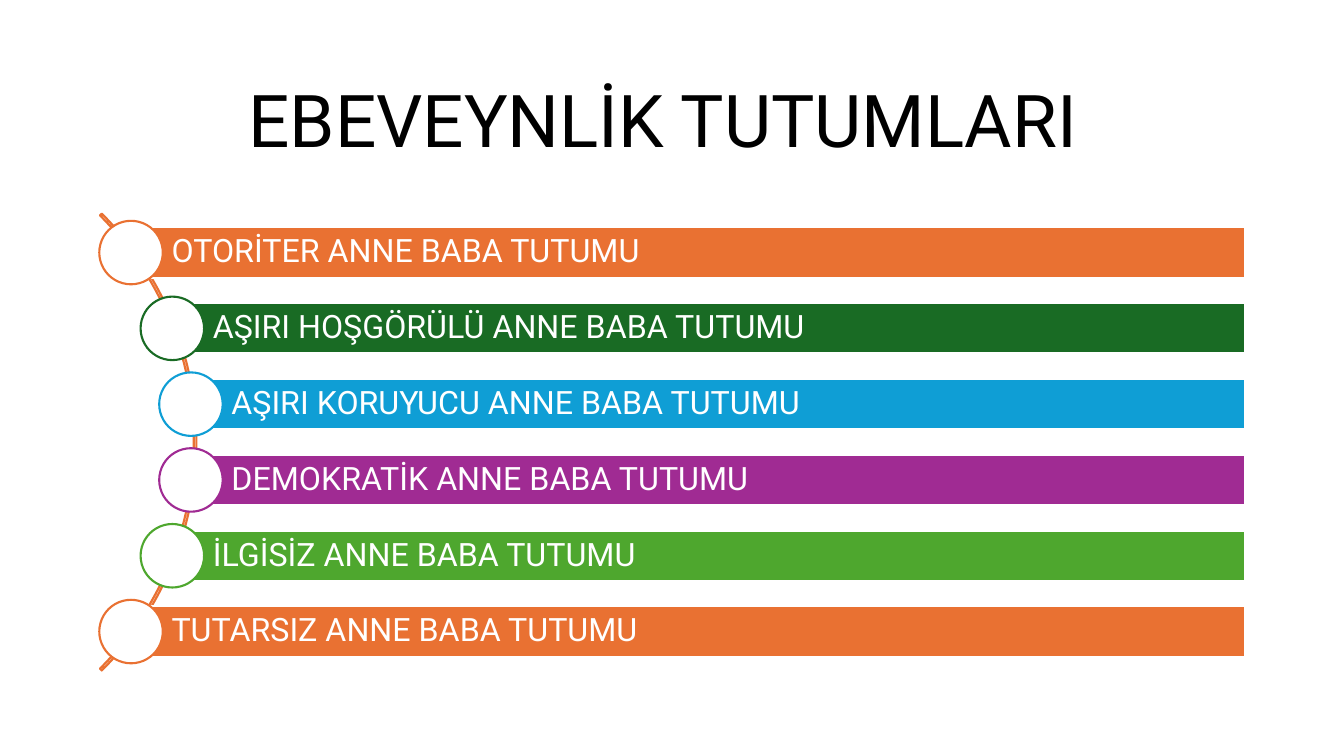
from math import sqrt

from pptx import Presentation
from pptx.dml.color import RGBColor
from pptx.enum.shapes import MSO_SHAPE
from pptx.enum.text import MSO_ANCHOR, PP_ALIGN
from pptx.util import Cm, Pt

FONT = "Roboto"
ATTITUDES = [
    ("OTORİTER ANNE BABA TUTUMU", "E97132"),
    ("AŞIRI HOŞGÖRÜLÜ ANNE BABA TUTUMU", "196B24"),
    ("AŞIRI KORUYUCU ANNE BABA TUTUMU", "0F9ED5"),
    ("DEMOKRATİK ANNE BABA TUTUMU", "A02B93"),
    ("İLGİSİZ ANNE BABA TUTUMU", "4EA72E"),
    ("TUTARSIZ ANNE BABA TUTUMU", "E97132"),
]


def color(hex_string):
    return RGBColor.from_string(hex_string)


def write(shape, text, size, text_color, align):
    frame = shape.text_frame
    frame.word_wrap = True
    frame.vertical_anchor = MSO_ANCHOR.MIDDLE
    para = frame.paragraphs[0]
    para.text = text
    para.alignment = align
    para.line_spacing = 0.9
    span = para.runs[0]
    span.font.name = FONT
    span.font.size = Pt(size)
    span.font.color.rgb = color(text_color)


def add_shape(page, kind, box, fill, line):
    shape = page.shapes.add_shape(kind, *(Cm(value) for value in box))
    shape.shadow.inherit = False
    shape.fill.solid()
    shape.fill.fore_color.rgb = color(fill)
    shape.line.color.rgb = color(line)
    shape.line.width = Pt(1.5)
    return shape


def add_title(page, box):
    title = page.shapes.add_textbox(*(Cm(value) for value in box))
    write(title, "EBEVEYNLİK TUTUMLARI ", 52, "000000", PP_ALIGN.CENTER)


def add_curved_list(page, box):
    left, top, width, height = box
    pitch = height / len(ATTITUDES)
    bar_height, circle_size = 1.27, 1.6

    # Arc: a quarter turn bulging to the right, centred on the list's height
    radius = 8.14
    center_x, center_y = left - 5.71, top + height / 2
    arc = add_shape(page, MSO_SHAPE.BLOCK_ARC,
                    (center_x - radius, center_y - radius, 2 * radius, 2 * radius),
                    "E97132", "E97132")
    arc.fill.background()
    for index, value in enumerate((189, 27, 0.004)):
        arc.adjustments[index] = value

    # Rows: each circle sits on the curve and its bar starts at the circle's centre
    curve_radius = 8.06
    for index, (name, accent) in enumerate(ATTITUDES):
        row_y = top + (index + 0.5) * pitch
        row_x = center_x + sqrt(curve_radius ** 2 - (row_y - center_y) ** 2)
        bar = add_shape(page, MSO_SHAPE.RECTANGLE,
                        (row_x, row_y - bar_height / 2, left + width - row_x, bar_height),
                        accent, "FFFFFF")
        frame = bar.text_frame
        frame.margin_left = Cm(1.02)
        frame.margin_top = frame.margin_right = frame.margin_bottom = Cm(0.15)
        write(bar, name, 23, "FFFFFF", PP_ALIGN.LEFT)
        add_shape(page, MSO_SHAPE.OVAL,
                  (row_x - circle_size / 2, row_y - circle_size / 2, circle_size, circle_size),
                  "FFFFFF", accent)


def main():
    deck = Presentation()
    deck.slide_width, deck.slide_height = Cm(33.87), Cm(19.05)
    page = deck.slides.add_slide(deck.slide_layouts[6])
    add_title(page, (2.33, 1.55, 29.21, 3.15))
    add_curved_list(page, (2.52, 5.41, 28.85, 11.46))
    deck.save("out.pptx")


if __name__ == "__main__":
    main()
